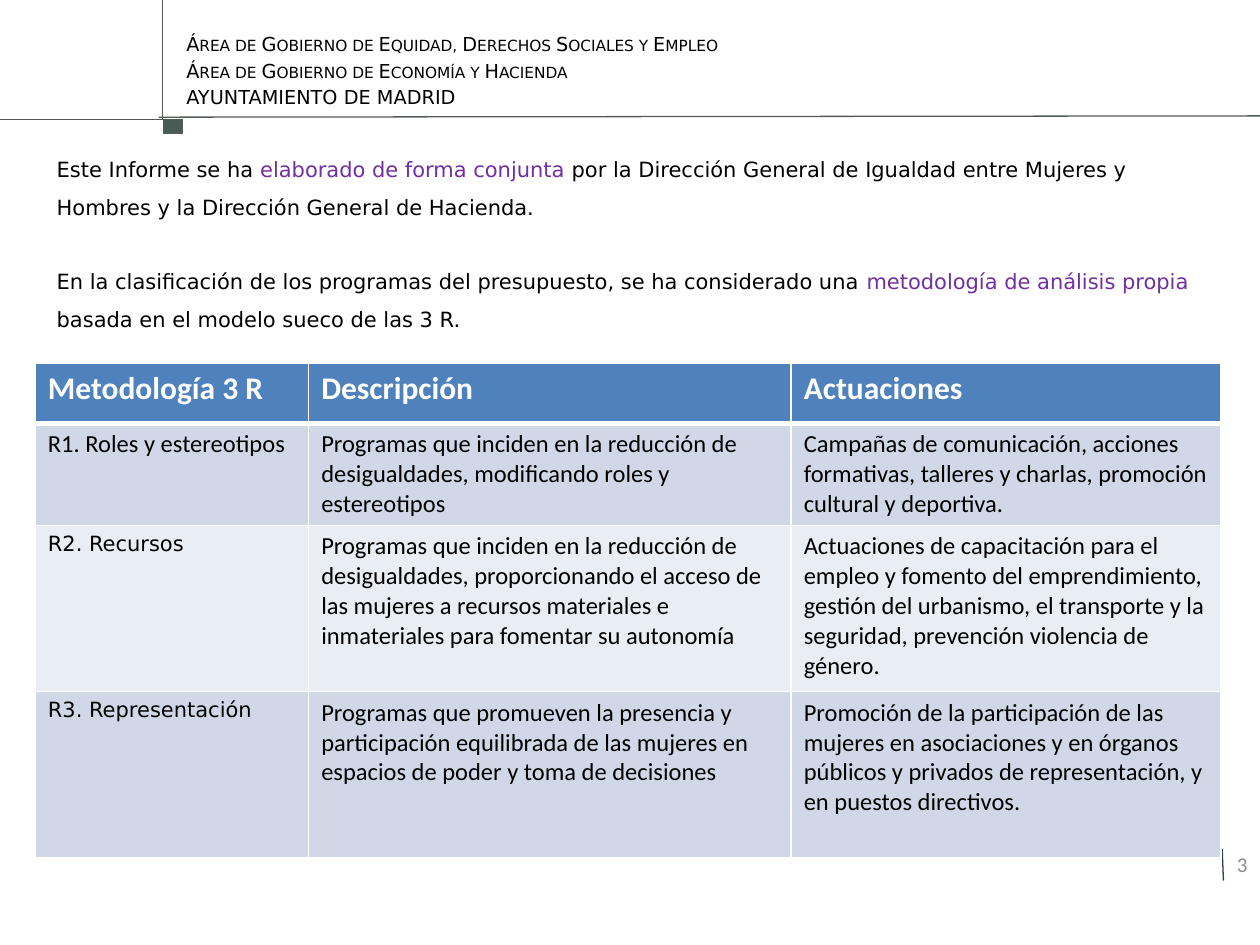
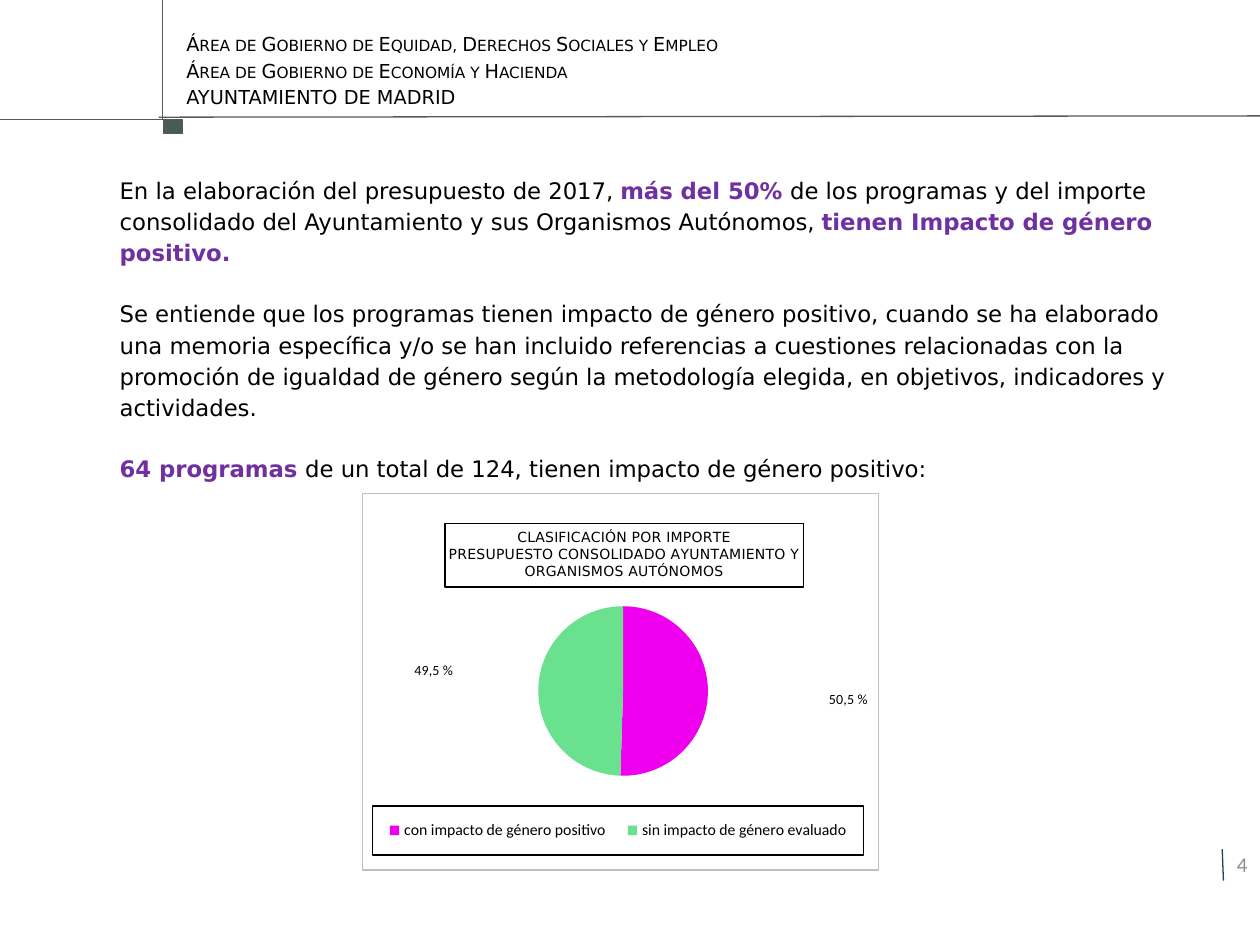
from dataclasses import dataclass

from lxml import etree
from pptx import Presentation
from pptx.chart import data as chart_data
from pptx.dml.color import RGBColor
from pptx.enum import chart as chart_enum, shapes, text
from pptx.oxml import parse_xml
from pptx.oxml.ns import qn
from pptx.util import Inches, Pt


@dataclass(frozen=True)
class Theme:
    ink: str = "000000"
    white: str = "FFFFFF"
    accent: str = "7030A0"
    rule: str = "545B54"
    marker: str = "495B55"
    page_rule: str = "254061"
    page: str = "8C8C8C"
    table_head: str = "4F81BD"
    bands: tuple = ("D0D8E8", "E9EDF4")
    slices: tuple = ("EE00EE", "69E18E")
    chart_border: str = "BFBFBF"
    sans: str = "DejaVu Sans"
    body: str = "Calibri"
    banner_size: float = 11
    head_size: float = 18
    cell_size: float = 14
    small_size: float = 12
    legend_size: float = 9
    chart_size: float = 8


THEME = Theme()

BANNER = [
    ("Área de Gobierno de Equidad, Derechos Sociales y Empleo", True),
    ("Área de Gobierno de Economía y Hacienda", True),
    ("AYUNTAMIENTO DE MADRID", False),
]
RULES = [
    ((1.29, 0), (1.29, 0.95), THEME.rule),
    ((0, 0.95), (1.29, 0.95), THEME.rule),
    ((1.26, 0.93), (10, 0.92), THEME.rule),
    ((9.7, 6.74), (9.71, 6.99), THEME.page_rule),
]

PLAIN, TINTED, STRONG = "plain", "tinted", "strong"
BREAK = "\n"

METHOD = dict(
    page=3, box=(0.35, 1.09, 9.29, 1.7), size=12, spacing=1.5, gap=21, indent=0,
    paragraphs=[
        [("Este Informe se ha ", PLAIN),
         ("elaborado de forma conjunta ", TINTED),
         ("por la Dirección General de Igualdad entre Mujeres y Hombres y la "
          "Dirección General de Hacienda.", PLAIN)],
        [("En la clasificación de los programas del presupuesto, se ha considerado una ", PLAIN),
         ("metodología de análisis propia ", TINTED),
         ("basada en el modelo sueco de las 3 R.", PLAIN)],
    ])

IMPACT = dict(
    page=4, box=(0.75, 1.32, 8.82, 2.55), size=13, spacing=1.14, gap=17.25, indent=0.1,
    paragraphs=[
        [("En la elaboración del presupuesto de 2017, ", PLAIN),
         ("más del 50% ", STRONG),
         ("de los programas y del importe consolidado del Ayuntamiento y sus "
          "Organismos Autónomos, ", PLAIN),
         ("tienen Impacto de género positivo.", STRONG)],
        [("Se entiende que los programas tienen impacto de género positivo, "
          "cuando se ha elaborado", PLAIN),
         (BREAK, PLAIN),
         ("una memoria específica y/o se han incluido referencias a cuestiones "
          "relacionadas con la promoción de igualdad de género según la metodología "
          "elegida, en objetivos, indicadores y actividades.", PLAIN)],
        [("64 programas ", STRONG),
         ("de un total de 124, tienen impacto de género positivo:", PLAIN)],
    ])

THREE_R = [
    ("Metodología 3 R", "Descripción", "Actuaciones"),
    ("R1. Roles y estereotipos",
     "Programas que inciden en la reducción de desigualdades, modificando roles y estereotipos",
     "Campañas de comunicación, acciones formativas, talleres y charlas, promoción "
     "cultural y deportiva."),
    ("R2. Recursos",
     "Programas que inciden en la reducción de desigualdades, proporcionando el acceso de "
     "las mujeres a recursos materiales e inmateriales para fomentar su autonomía",
     "Actuaciones de capacitación para el empleo y fomento del emprendimiento, gestión del "
     "urbanismo, el transporte y la seguridad, prevención violencia de género."),
    ("R3. Representación",
     "Programas que promueven la presencia y participación equilibrada de las mujeres en "
     "espacios de poder y toma de decisiones",
     "Promoción de la participación de las mujeres en asociaciones y en órganos públicos y "
     "privados de representación, y en puestos directivos."),
]
COLUMN_WIDTHS = (2.17, 3.83, 3.41)
ROW_HEIGHTS = (0.48, 0.81, 1.32, 1.32)

BUDGET_TITLE = ("CLASIFICACIÓN POR IMPORTE",
                "PRESUPUESTO CONSOLIDADO AYUNTAMIENTO Y ORGANISMOS AUTÓNOMOS")
BUDGET = [
    ("con impacto de género positivo", 50.5, "50,5 %", (0.22, 0.02)),
    ("sin impacto de género evaluado", 49.5, "49,5 %", (-0.15, -0.05)),
]


def rgb(color):
    return RGBColor.from_string(color)


def style(font, size, color=THEME.ink, name=THEME.sans, bold=False):
    font.size, font.name, font.bold = Pt(size), name, bold
    font.color.rgb = rgb(color)


def inches(box):
    return [Inches(length) for length in box]


def add_rule(slide, start, end, color):
    rule = slide.shapes.add_connector(shapes.MSO_CONNECTOR.STRAIGHT, *inches(start + end))
    rule.line.color.rgb = rgb(color)
    rule.line.width = Pt(0.75)
    etree.SubElement(rule._element.spPr, qn("a:effectLst"))


def add_frame(slide, page):
    for rule in RULES:
        add_rule(slide, *rule)
    marker = slide.shapes.add_shape(
        shapes.MSO_SHAPE.RECTANGLE, *inches((1.3, 0.95, 0.15, 0.11)))
    marker.shadow.inherit = False
    marker.fill.solid()
    marker.fill.fore_color.rgb = rgb(THEME.marker)
    marker.line.color.rgb = rgb(THEME.rule)
    marker.line.width = Pt(0.75)

    banner = slide.shapes.add_textbox(*inches((1.38, 0, 7.95, 0.91))).text_frame
    banner.word_wrap = True
    banner.vertical_anchor = text.MSO_ANCHOR.BOTTOM
    banner.text = "\n".join(line for line, _ in BANNER)
    for paragraph, (_, small_caps) in zip(banner.paragraphs, BANNER):
        paragraph.line_spacing = 1.14
        run = paragraph.runs[0]
        style(run.font, THEME.banner_size)
        if small_caps:
            run._r.get_or_add_rPr().set("cap", "small")

    number = slide.shapes.add_textbox(*inches((9.61, 6.66, 0.39, 0.4))).text_frame
    number.word_wrap = True
    number.vertical_anchor = text.MSO_ANCHOR.MIDDLE
    number.text = str(page)
    number.paragraphs[0].alignment = text.PP_ALIGN.RIGHT
    style(number.paragraphs[0].runs[0].font, THEME.small_size, THEME.page, THEME.body)


def add_message(deck, content):
    slide = deck.slides.add_slide(deck.slide_layouts[5])
    add_frame(slide, content["page"])
    title = slide.shapes.title
    title.left, title.top, title.width, title.height = inches(content["box"])
    frame = title.text_frame
    frame.word_wrap = True
    frame.auto_size = text.MSO_AUTO_SIZE.NONE
    frame.vertical_anchor = text.MSO_ANCHOR.TOP
    for index, runs in enumerate(content["paragraphs"]):
        paragraph = frame.add_paragraph() if index else frame.paragraphs[0]
        paragraph.alignment = text.PP_ALIGN.LEFT
        paragraph.line_spacing = content["spacing"]
        paragraph.space_before = Pt(content["gap"] if index else 0)
        properties = paragraph._p.get_or_add_pPr()
        properties.set("marL", str(Inches(content["indent"])))
        properties.set("indent", "0")
        for words, tone in runs:
            if words == BREAK:
                paragraph.add_line_break()
                continue
            run = paragraph.add_run()
            run.text = words
            color = THEME.ink if tone == PLAIN else THEME.accent
            style(run.font, content["size"], color, bold=tone == STRONG)
    return slide


def add_borders(cell, widths):
    for side, width in widths.items():
        line = etree.SubElement(cell._tc.get_or_add_tcPr(), qn(f"a:ln{side}"), w=str(Pt(width)))
        fill = etree.SubElement(line, qn("a:solidFill"))
        etree.SubElement(fill, qn("a:srgbClr"), val=THEME.white)


def add_three_r(slide):
    box = (0.28, 2.88, sum(COLUMN_WIDTHS), sum(ROW_HEIGHTS))
    table = slide.shapes.add_table(len(THREE_R), len(COLUMN_WIDTHS), *inches(box)).table
    for column, width in zip(table.columns, COLUMN_WIDTHS):
        column.width = Inches(width)
    for r, (row, height) in enumerate(zip(THREE_R, ROW_HEIGHTS)):
        table.rows[r].height = Inches(height)
        for c, words in enumerate(row):
            cell = table.cell(r, c)
            add_borders(cell, dict(L=1, R=1, T=3 if r == 1 else 1, B=1 if r else 3))
            cell.fill.solid()
            cell.fill.fore_color.rgb = rgb(THEME.bands[(r - 1) % 2] if r else THEME.table_head)
            cell.text = words
            font = cell.text_frame.paragraphs[0].runs[0].font
            if r == 0:
                style(font, THEME.head_size, THEME.white, THEME.body, bold=True)
            elif c == 0 and r > 1:
                style(font, THEME.small_size)
            else:
                style(font, THEME.cell_size, name=THEME.body)


def chart_xml(tag, inner):
    return parse_xml(
        f'<c:{tag} xmlns:c="http://schemas.openxmlformats.org/drawingml/2006/chart" '
        f'xmlns:a="http://schemas.openxmlformats.org/drawingml/2006/main">{inner}</c:{tag}>')


def place(part, index, x, y, w=None, h=None, fixed=True, inner=False):
    for old in part.findall(qn("c:layout")):
        part.remove(old)
    settings = [("layoutTarget", "inner")] if inner else []
    if fixed:
        settings += [("xMode", "edge"), ("yMode", "edge")]
    settings += [("x", x), ("y", y)]
    if w:
        settings += [("w", w), ("h", h)]
    values = "".join(f'<c:{name} val="{value}"/>' for name, value in settings)
    part.insert(index, chart_xml("layout", f"<c:manualLayout>{values}</c:manualLayout>"))


def boxed(line):
    def solid(color):
        return f'<a:solidFill><a:srgbClr val="{color}"/></a:solidFill>'
    return chart_xml("spPr", f'{solid(THEME.white)}<a:ln w="{Pt(0.75)}">{solid(line)}</a:ln>')


def add_budget(slide):
    data = chart_data.CategoryChartData(number_format="0.0")
    data.categories = [name for name, *_ in BUDGET]
    data.add_series("Series 1", [value for _, value, *_ in BUDGET])
    chart = slide.shapes.add_chart(
        chart_enum.XL_CHART_TYPE.PIE, *inches((2.87, 3.91, 4.11, 3)), data).chart
    style(chart.font, 10, name=THEME.body)
    space = chart._chartSpace
    space.find(qn("c:chart")).addnext(boxed(THEME.chart_border))
    place(space.chart.plotArea, 0, 0.23, 0.3, 0.55, 0.45, inner=True)

    chart.has_title = True
    title = chart.chart_title
    title.text_frame.text = "\n".join(BUDGET_TITLE)
    for paragraph in title.text_frame.paragraphs:
        paragraph.alignment = text.PP_ALIGN.CENTER
        style(paragraph.runs[0].font, THEME.chart_size)
    place(title._element, 1, 0.16, 0.08)
    title._element.find(qn("c:overlay")).set("val", "1")
    title._element.find(qn("c:overlay")).addnext(boxed(THEME.ink))

    chart.has_legend = True
    legend = chart.legend
    legend.position = chart_enum.XL_LEGEND_POSITION.BOTTOM
    legend.include_in_layout = False
    style(legend.font, THEME.legend_size, name=THEME.body)
    place(legend._element, 1, 0.02, 0.83, 0.95, 0.13)
    legend._element.find(qn("c:overlay")).addnext(boxed(THEME.ink))

    plot = chart.plots[0]
    plot.vary_by_categories = True
    series = plot.series[0]
    for index, (_, _, caption, shift) in enumerate(BUDGET):
        point = series.points[index]
        point.format.fill.solid()
        point.format.fill.fore_color.rgb = rgb(THEME.slices[index])
        label = point.data_label
        label.text_frame.text = caption
        style(label.text_frame.paragraphs[0].runs[0].font, THEME.chart_size, name=THEME.body)
        label.position = chart_enum.XL_LABEL_POSITION.OUTSIDE_END
        place(label._get_or_add_dLbl(), 1, *shift, fixed=False)
    series.data_labels.show_value = True
    for leader in space.iter(qn("c:showLeaderLines")):
        leader.set("val", "0")


def main():
    deck = Presentation()
    deck.slide_width, deck.slide_height = Inches(10), Inches(7.5)
    add_three_r(add_message(deck, METHOD))
    add_budget(add_message(deck, IMPACT))
    deck.save("out.pptx")


if __name__ == "__main__":
    main()
